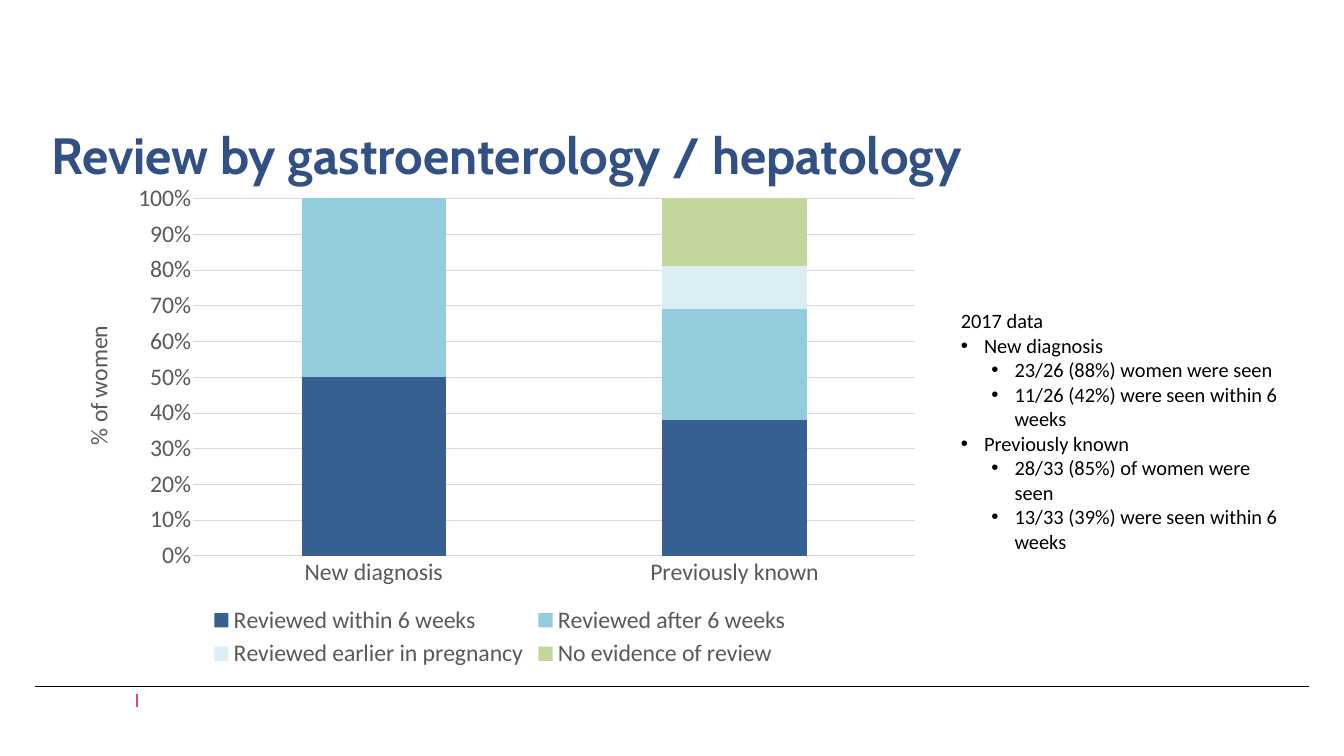
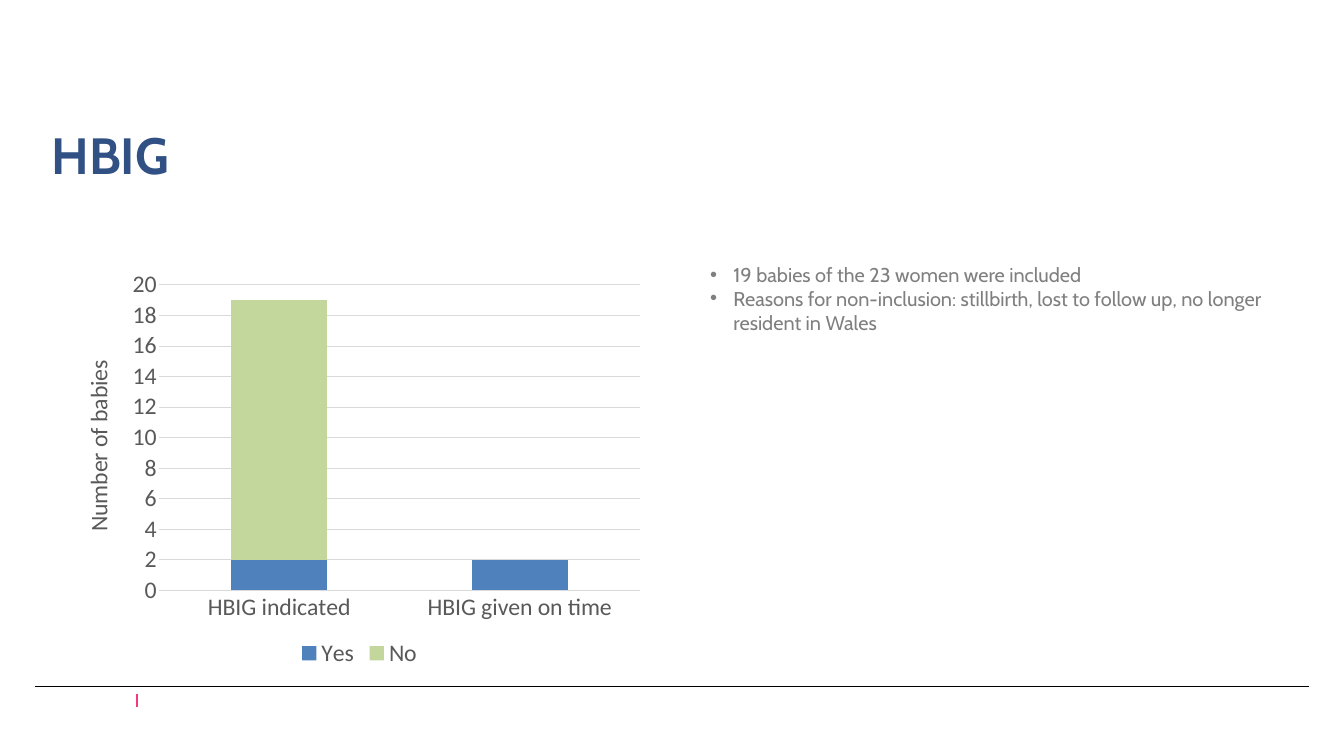
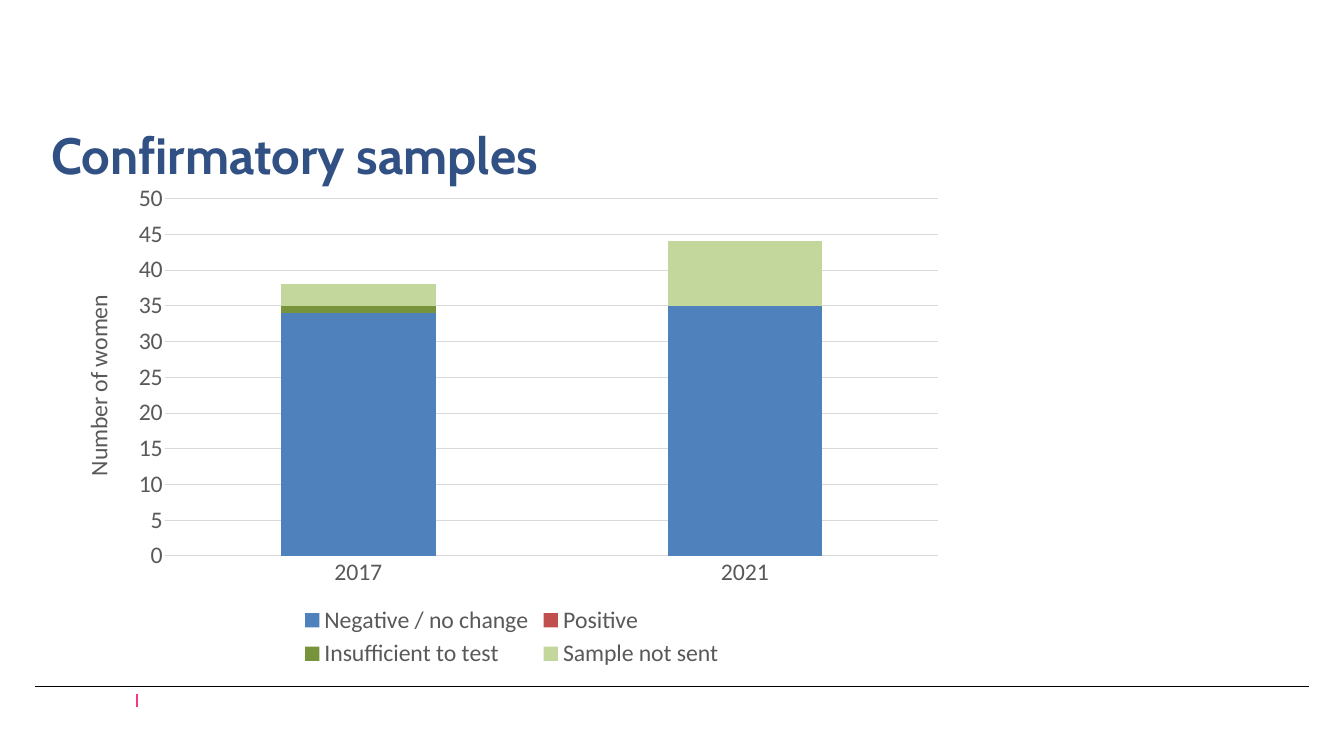
from dataclasses import dataclass

from pptx import Presentation
from pptx import util as u
from pptx.chart.data import CategoryChartData
from pptx.dml.color import RGBColor
from pptx.enum import chart as ch, shapes
from pptx.oxml.ns import qn
from lxml import etree

PX = 9144  # EMU: 100 px to the inch


@dataclass(frozen=True)
class Theme:
    head: str = "Cabin"
    sans: str = "Calibri"
    navy: str = "315083"
    black: str = "000000"
    pink: str = "F43882"
    grey: str = "7F7F7F"
    label: str = "595959"
    grid: str = "D9D9D9"
    deep: str = "376092"
    aqua: str = "93CDDD"
    ice: str = "DBEEF4"
    blue: str = "4F81BD"
    red: str = "C0504D"
    olive: str = "77933C"
    green: str = "C3D69B"
    title: float = 60
    chart: float = 28
    body: float = 24
    note: float = 23.5


T = Theme()


def px(*nums):
    return [u.Emu(n * PX) for n in nums]


def rgb(code):
    return RGBColor.from_string(code)


def style(font, name, size, color, bold=False):
    font.name, font.size, font.bold = name, u.Pt(size), bold
    font.color.rgb = rgb(color)


def rule(slide, x1, y1, x2, y2, color, width):
    line = slide.shapes.add_connector(
        shapes.MSO_CONNECTOR.STRAIGHT, *px(x1, y1, x2, y2))
    line.line.color.rgb = rgb(color)
    line.line.width = u.Pt(width)
    props = line._element.spPr
    etree.SubElement(props, qn("a:effectLst"))


def bullet(para, level):
    """Hang a dot: level 1 at the left edge, level 2 half an inch in."""
    para.level = level - 1
    props = para._p.get_or_add_pPr()
    hang = 38
    props.set("marL", str((hang + 50 * (level - 1)) * PX))
    props.set("indent", str(-hang * PX))
    etree.SubElement(props, qn("a:buFont"), typeface="Arial")
    etree.SubElement(props, qn("a:buChar"), char="•")


def write(slide, box, lines, *look):
    """Add a text box; each line is a (level, text) pair, level 0 without bullet."""
    frame = slide.shapes.add_textbox(*px(*box)).text_frame
    frame.word_wrap = True
    frame.margin_left = frame.margin_right = 0
    frame.margin_top = frame.margin_bottom = 0
    for i, (level, words) in enumerate(lines):
        para = frame.paragraphs[0] if i == 0 else frame.add_paragraph()
        para.text = words
        if level:
            bullet(para, level)
        style(para.font, *look)


def page(deck, title):
    """Add a slide with the shared title and footer rules."""
    slide = deck.slides.add_slide(deck.slide_layouts[6])
    rule(slide, 57, 1122, 2141, 1122, T.black, 0.41)
    rule(slide, 224, 1157, 224, 1136, T.pink, 1.65)
    write(slide, (84, 202, 1976, 101), [(0, title)],
          T.head, T.title, T.navy, True)
    return slide


def stack(slide, box, label, cats, rows, top=None, step=None):
    """Add a stacked column chart; without a top value it shows percentages."""
    data = CategoryChartData()
    data.categories = cats
    for name, vals, _ in rows:
        data.add_series(name, vals)
    kinds = ch.XL_CHART_TYPE
    kind = kinds.COLUMN_STACKED if top else kinds.COLUMN_STACKED_100
    chart = slide.shapes.add_chart(kind, *px(*box), data).chart
    style(chart.font, T.sans, T.chart, T.label)
    chart.has_title = False
    chart.has_legend = True
    chart.legend.position = ch.XL_LEGEND_POSITION.BOTTOM
    chart.legend.include_in_layout = False
    style(chart.legend.font, T.sans, T.chart, T.label)

    plot = chart.plots[0]
    plot.gap_width, plot.overlap = 150, 100
    plot.vary_by_categories = False
    for series, (_, _, color) in zip(plot.series, rows):
        series.format.fill.solid()
        series.format.fill.fore_color.rgb = rgb(color)

    cat, val = chart.category_axis, chart.value_axis
    for axis in (cat, val):
        axis.major_tick_mark = axis.minor_tick_mark = ch.XL_TICK_MARK.NONE
        style(axis.tick_labels.font, T.sans, T.chart, T.label)
    val.has_major_gridlines = True
    for line in (cat.format.line, val.major_gridlines.format.line):
        line.color.rgb = rgb(T.grid)
        line.width = u.Pt(0.75)
    val.format.line.fill.background()
    val.tick_labels.number_format = "General" if top else "0%"
    val.tick_labels.number_format_is_linked = False
    if top:
        val.minimum_scale, val.maximum_scale, val.major_unit = 0, top, step

    frame = val.axis_title.text_frame
    frame.text = label
    frame._txBody.bodyPr.set("rot", "-5400000")
    style(frame.paragraphs[0].font, T.sans, T.chart, T.label)


def review(deck):
    slide = page(deck, "Review by gastroenterology / hepatology")
    stack(slide, (110, 285, 1415, 816), "% of women",
          ["New diagnosis", "Previously known"],
          [("Reviewed within 6 weeks", (50, 38), T.deep),
           ("Reviewed after 6 weeks", (50, 31), T.aqua),
           ("Reviewed earlier in pregnancy", (0, 12), T.ice),
           ("No evidence of review", (0, 19), T.green)])
    write(slide, (1572, 505, 539, 404),
          [(0, "2017 data"),
           (1, "New diagnosis"),
           (2, "23/26 (88%) women were seen"),
           (2, "11/26 (42%) were seen within 6 weeks"),
           (1, "Previously known"),
           (2, "28/33 (85%) of women were seen"),
           (2, "13/33 (39%) were seen within 6 weeks")],
          T.sans, T.body, T.black)


def hbig(deck):
    slide = page(deck, "HBIG")
    stack(slide, (110, 429, 956, 671), "Number of babies",
          ["HBIG indicated", "HBIG given on time"],
          [("Yes", (2, 2), T.blue), ("No", (17, None), T.green)], 20, 2)
    write(slide, (1162, 429, 956, 119),
          [(1, "19 babies of the 23 women were included"),
           (1, "Reasons for non-inclusion: stillbirth, lost to follow up, "
               "no longer resident in Wales")],
          T.head, T.note, T.grey)


def samples(deck):
    slide = page(deck, "Confirmatory samples")
    stack(slide, (110, 285, 1454, 816), "Number of women", ["2017", "2021"],
          [("Negative / no change", (34, 35), T.blue),
           ("Positive", (0, 0), T.red),
           ("Insufficient to test", (1, 0), T.olive),
           ("Sample not sent", (3, 9), T.green)], 50, 5)


def main():
    deck = Presentation()
    deck.slide_width, deck.slide_height = px(2199, 1237)
    for build in (review, hbig, samples):
        build(deck)
    deck.save("out.pptx")


if __name__ == "__main__":
    main()
